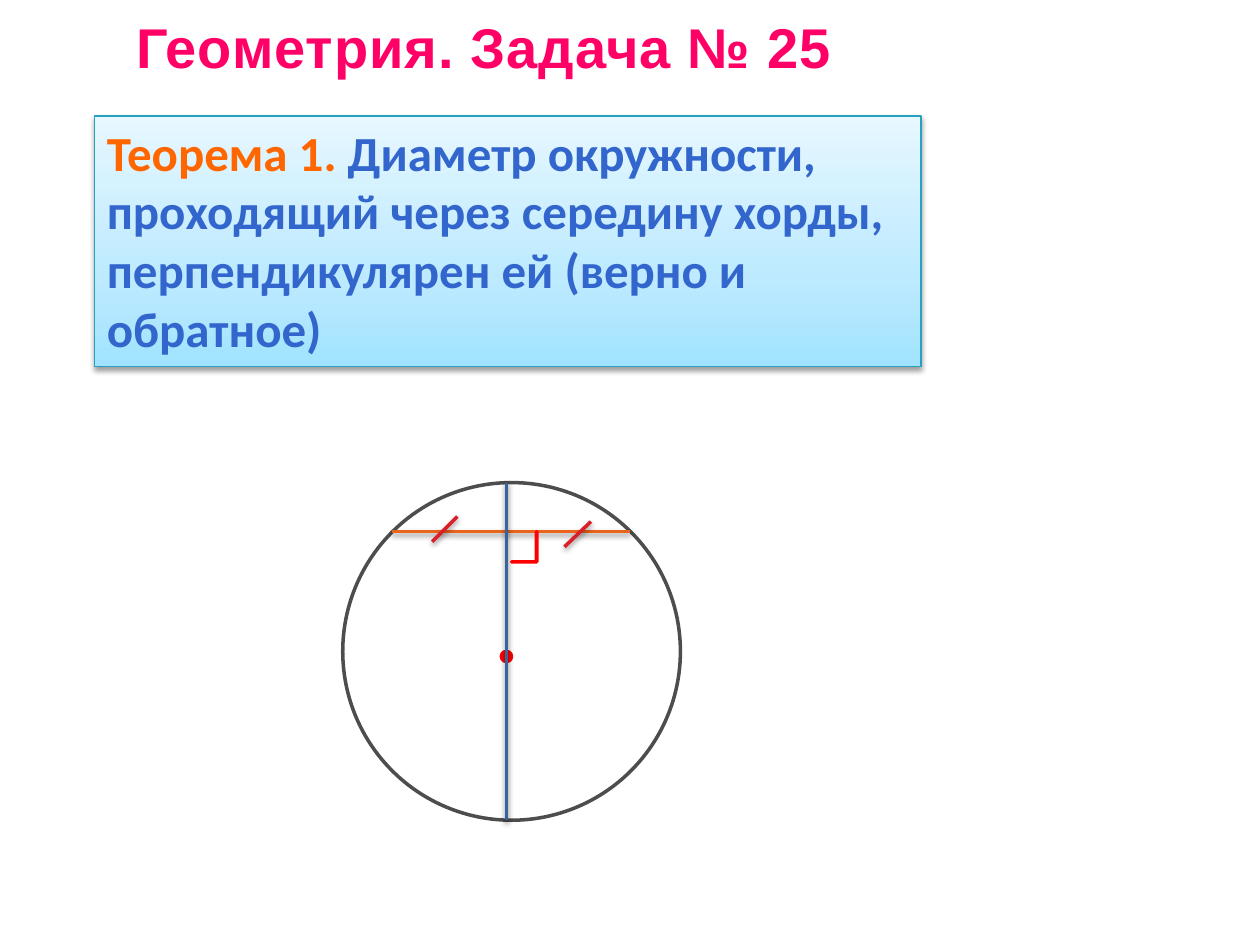
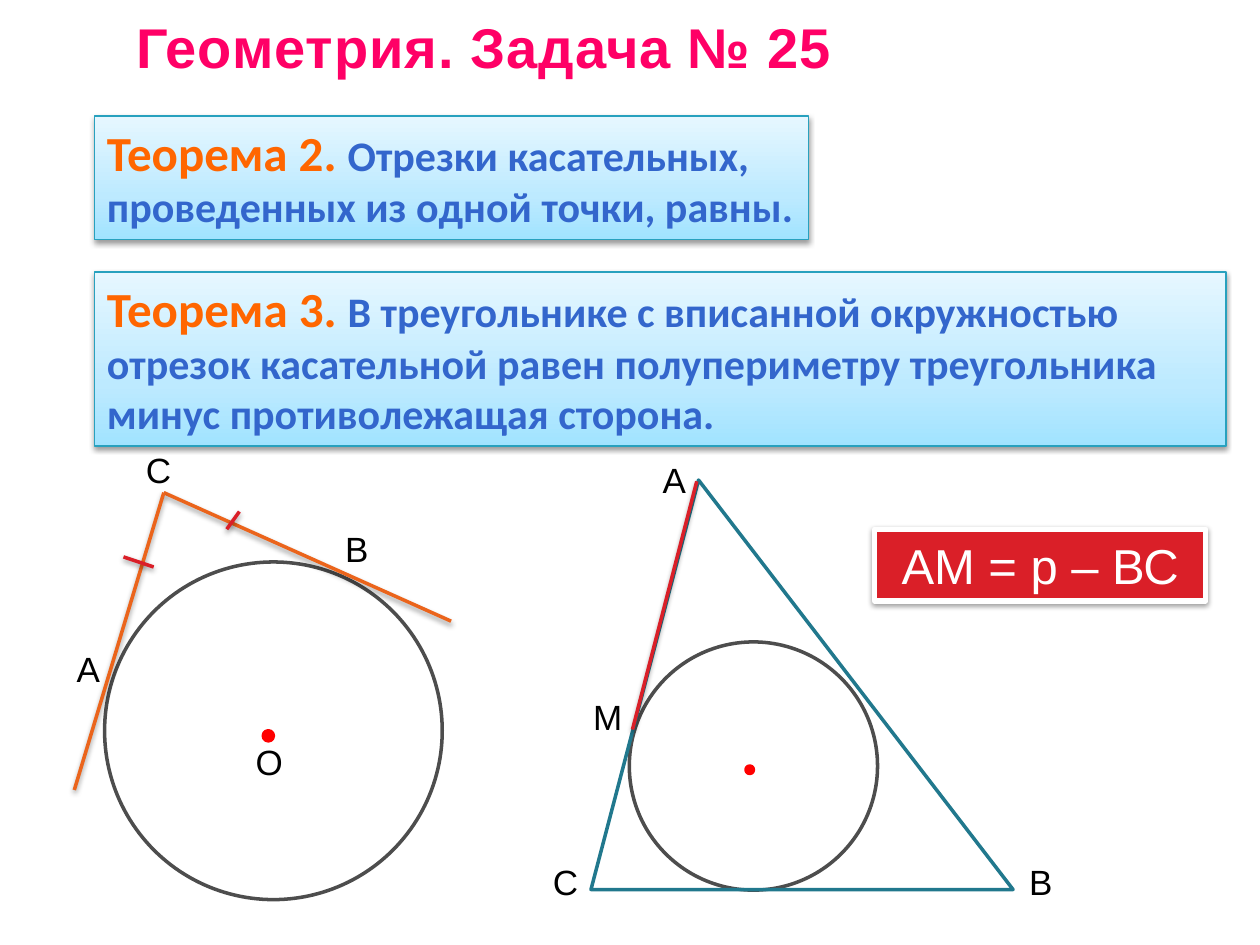
from dataclasses import dataclass
from lxml.etree import SubElement
from pptx import Presentation
from pptx.dml.color import RGBColor
from pptx.enum.shapes import MSO_CONNECTOR, MSO_SHAPE
from pptx.enum.text import MSO_ANCHOR, MSO_AUTO_SIZE, PP_ALIGN
from pptx.oxml.ns import qn
from pptx.util import Inches, Pt


@dataclass(frozen=True)
class Theme:
    title: str = "FF0066"
    heading: str = "FF6600"
    statement: str = "3366CC"
    box_line: str = "28A1BE"
    box_stops: tuple = ((0, "A1E3FF"), (35, "BDEAFF"), (100, "E6F7FF"))
    circle: str = "4D4D4D"
    dot: str = "FF0000"
    orange: str = "EB641B"
    red: str = "DA1F28"
    blue: str = "39639D"
    teal: str = "21788D"
    black: str = "000000"
    white: str = "FFFFFF"
    title_size: int = 32
    large: int = 28
    medium: int = 24
    label: int = 20
    heading_font: str = "Arial"
    body_font: str = "Calibri"


THEME = Theme()
TITLE = "Геометрия. Задача № 25"
TITLE_AREA = (0.98, 0.05, 6.85, 0.64)
LABEL_SIZE = (0.55, 0.44)

PAGES = [
    {
        "theorems": [
            ("Теорема 1. ",
             "Диаметр окружности, проходящий через середину хорды, перпендикулярен ей (верно и обратное)",
             THEME.large, (0.75, 0.92, 6.56, 1.99)),
        ],
        "circles": [(4.06, 5.17, 2.68)],
        "lines": [
            ((3.11, 4.22), (5, 4.22), THEME.orange, 2),
            ((4.02, 3.83), (4.02, 6.51), THEME.blue, 2.25),
            ((3.63, 4.1), (3.43, 4.3), THEME.red, 2),
            ((4.69, 4.14), (4.48, 4.34), THEME.red, 2),
        ],
        "right_angle": (4.06, 4.22, 0.2, 0.24),
    },
    {
        "theorems": [
            ("Теорема 2. ", "Отрезки касательных, проведенных из одной точки, равны.",
             THEME.medium, (0.75, 0.92, 5.67, 0.98)),
            ("Теорема 3. ",
             "В треугольнике с вписанной окружностью отрезок касательной равен "
             "полупериметру треугольника минус противолежащая сторона.",
             THEME.medium, (0.75, 2.16, 8.98, 1.38)),
        ],
        "circles": [(2.17, 5.8, 2.68), (5.98, 6.08, 1.97)],
        "triangle": (4.69, 3.81, 3.35, 3.25),
        "lines": [
            ((3.58, 4.93), (1.3, 3.91), THEME.orange, 2),
            ((0.59, 6.27), (1.3, 3.91), THEME.orange, 2),
            ((1.22, 4.5), (0.98, 4.42), THEME.red, 2),
            ((1.9, 4.06), (1.8, 4.2), THEME.red, 2),
            ((5.02, 5.79), (5.53, 3.82), THEME.red, 2),
        ],
        "labels": [
            ("О", 1.93, 5.83), ("С", 1.06, 3.51), ("А", 0.51, 5.09), ("В", 2.64, 4.14),
            ("А", 5.16, 3.59), ("В", 8.07, 6.78), ("С", 4.29, 6.78), ("М", 4.61, 5.47),
        ],
        "formula": ("АМ = р – ВС", (6.94, 4.2, 2.63, 0.57)),
    },
]


def inches(values):
    return [Inches(value) for value in values]


def color(value):
    return RGBColor.from_string(value)


def add_span(para, text, *, size, ink, font=THEME.heading_font, bold=False, spacing=0):
    span = para.add_run()
    span.text = text
    span.font.size = Pt(size)
    span.font.name = font
    span.font.bold = bold
    span.font.color.rgb = color(ink)
    if spacing:
        span.font._element.set("spc", str(round(spacing * 100)))
    return span


def add_shadow(item, opacity=38, distance=1.6):
    properties = item._element.spPr
    effects = properties.find(qn("a:effectLst"))
    if effects is None:
        effects = SubElement(properties, qn("a:effectLst"))
    shadow = SubElement(effects, qn("a:outerShdw"), blurRad=str(Pt(3.1)),
                        dist=str(Pt(distance)), dir="5400000", rotWithShape="0")
    ink = SubElement(shadow, qn("a:srgbClr"), val=THEME.black)
    SubElement(ink, qn("a:alpha"), val=str(opacity * 1000))


def paint(shape, *, fill=None, line=None, width=2):
    shape.shadow.inherit = False
    if fill:
        shape.fill.solid()
        shape.fill.fore_color.rgb = color(fill)
    else:
        shape.fill.background()
    shape.line.color.rgb = color(line)
    shape.line.width = Pt(width)


def fill_gradient(box):
    box.fill.gradient()
    box.fill.gradient_angle = 90
    stops = box._element.spPr.find(qn("a:gradFill")).find(qn("a:gsLst"))
    for stop in list(stops):
        stops.remove(stop)
    for position, ink in THEME.box_stops:
        stop = SubElement(stops, qn("a:gs"), pos=str(position * 1000))
        SubElement(stop, qn("a:srgbClr"), val=ink)


def add_box(page, area):
    box = page.shapes.add_textbox(*inches(area))
    box.text_frame.word_wrap = True
    box.text_frame.auto_size = MSO_AUTO_SIZE.SHAPE_TO_FIT_TEXT
    return box


def add_title(page):
    title = page.shapes.title
    title.left, title.top, title.width, title.height = inches(TITLE_AREA)
    frame = title.text_frame
    frame.auto_size = MSO_AUTO_SIZE.NONE
    frame.vertical_anchor = MSO_ANCHOR.TOP
    para = frame.paragraphs[0]
    para.alignment = PP_ALIGN.LEFT
    add_span(para, TITLE, size=THEME.title_size, ink=THEME.title, bold=True, spacing=0.5)


def add_theorem(page, heading, statement, size, area):
    box = add_box(page, area)
    paint(box, line=THEME.box_line, width=0.75)
    fill_gradient(box)
    add_shadow(box)
    para = box.text_frame.paragraphs[0]
    add_span(para, heading, size=THEME.large, ink=THEME.heading, font=THEME.body_font, bold=True)
    add_span(para, statement, size=size, ink=THEME.statement, font=THEME.body_font, bold=True)


def add_circle(page, center_x, center_y, diameter):
    group = page.shapes.add_group_shape()
    radius = diameter / 2
    area = (center_x - radius, center_y - radius, diameter, diameter)
    circle = group.shapes.add_shape(MSO_SHAPE.OVAL, *inches(area))
    paint(circle, line=THEME.circle)
    dot_size = 0.03 * diameter
    dot_area = (center_x - dot_size, center_y, dot_size, dot_size)
    dot = group.shapes.add_shape(MSO_SHAPE.OVAL, *inches(dot_area))
    paint(dot, fill=THEME.dot, line=THEME.dot)


def add_line(page, start, end, ink, width):
    line = page.shapes.add_connector(MSO_CONNECTOR.STRAIGHT, *inches(start + end))
    line.line.color.rgb = color(ink)
    line.line.width = Pt(width)
    add_shadow(line)


def add_triangle(page, area):
    triangle = page.shapes.add_shape(MSO_SHAPE.ISOSCELES_TRIANGLE, *inches(area))
    triangle.adjustments[0] = 0.255
    paint(triangle, line=THEME.teal)


def add_right_angle(page, area):
    mark = page.shapes.add_shape(MSO_SHAPE.HALF_FRAME, *inches(area))
    mark.adjustments[0] = 0
    mark.adjustments[1] = 0.015
    mark.rotation = 180
    paint(mark, fill=THEME.dot, line=THEME.dot)


def add_label(page, text, left, top):
    box = add_box(page, (left, top, *LABEL_SIZE))
    add_span(box.text_frame.paragraphs[0], text, size=THEME.label, ink=THEME.black)


def add_formula(page, text, area):
    box = add_box(page, area)
    paint(box, fill=THEME.red, line=THEME.white, width=3)
    add_shadow(box)
    para = box.text_frame.paragraphs[0]
    para.alignment = PP_ALIGN.CENTER
    add_span(para, text, size=THEME.large, ink=THEME.white)


def build_page(deck, content):
    page = deck.slides.add_slide(deck.slide_layouts[5])
    add_title(page)
    for theorem in content["theorems"]:
        add_theorem(page, *theorem)
    for circle in content["circles"]:
        add_circle(page, *circle)
    if "triangle" in content:
        add_triangle(page, content["triangle"])
    for line in content["lines"]:
        add_line(page, *line)
    if "right_angle" in content:
        add_right_angle(page, content["right_angle"])
    for label in content.get("labels", []):
        add_label(page, *label)
    if "formula" in content:
        add_formula(page, *content["formula"])


def main():
    deck = Presentation()
    deck.slide_width, deck.slide_height = Inches(10), Inches(7.5)
    for content in PAGES:
        build_page(deck, content)
    deck.save("out.pptx")


if __name__ == "__main__":
    main()
